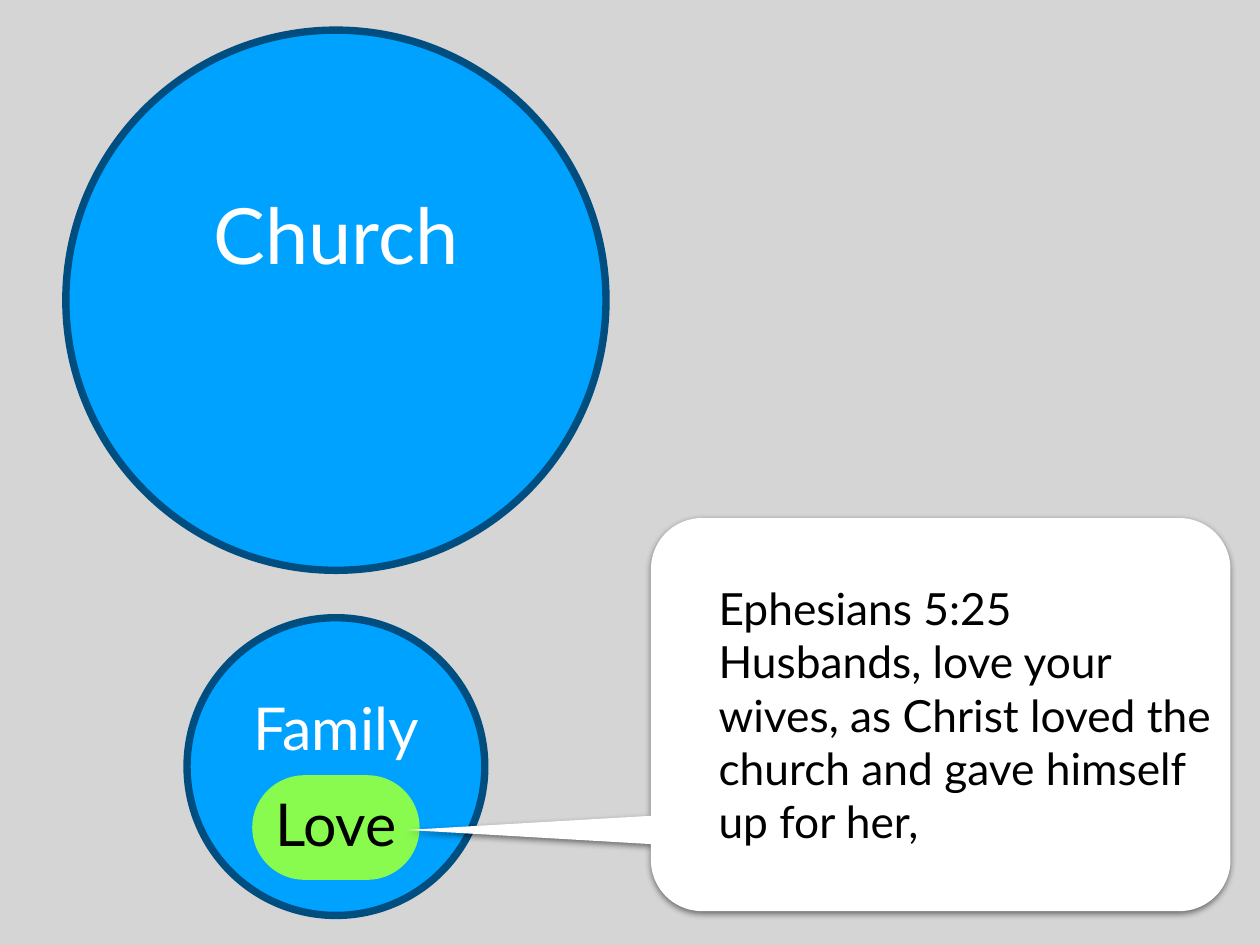
import math
from pptx import Presentation
from pptx import util as u
from pptx.dml.color import RGBColor
from pptx.enum import shapes, text
from pptx.oxml import parse_xml
from pptx.oxml.ns import nsdecls

COLOURS = {"backdrop": "D5D5D5", "circle": "00A2FF", "rim": "004D80",
           "pill": "89FA4E", "bubble": "FFFFFF", "light": "FFFFFF", "dark": "000000"}
SLIDE = (1024, 768)
AXIS = 273
CIRCLES = [(244, 439), (623, 242)]
PILL = (672.5, 136, 85)
LABELS = [("Church", 190, 220, 93, 63, "light"),
          ("Family", 591, 153, 73, 48, "light"),
          ("Love", 668.5, 114, 73, 48, "dark")]
VERSE = ["Ephesians 5:25",
         "Husbands, love your wives, as Christ loved the church and gave himself up for her,"]
VERSE_BOX = (580, 454, 416, 253)
BUBBLE = (529, 421, 1000, 740.5)
CORNER = 41.5
TIP = (331, 674.5)
TAIL_HALF = 11.5
ARC_STEPS = 18
FRAME = {"vertical_anchor": text.MSO_ANCHOR.MIDDLE,
         "auto_size": text.MSO_AUTO_SIZE.SHAPE_TO_FIT_TEXT,
         **{f"margin_{side}": u.Pt(4) for side in ("left", "top", "right", "bottom")}}


def rgb(name):
    return RGBColor.from_string(COLOURS[name])


def centred(middle, width, height):
    return AXIS - width / 2, middle - height / 2, width, height


def paint(shape, fill, rim=None):
    shape.shadow.inherit = False
    shape.fill.solid()
    shape.fill.fore_color.rgb = rgb(fill)
    if rim:
        shape.line.color.rgb = rgb(rim)
        shape.line.width = u.Pt(6)
    else:
        shape.line.fill.background()
    return shape


def add_preset(slide, kind, box, fill, rim=None):
    return paint(slide.shapes.add_shape(kind, *map(u.Pt, box)), fill, rim)


def add_words(slide, lines, box, size, colour, align, wrap):
    frame = slide.shapes.add_textbox(*map(u.Pt, box)).text_frame
    for key, value in {**FRAME, "word_wrap": wrap}.items():
        setattr(frame, key, value)
    frame.text = "\n".join(lines)
    for paragraph in frame.paragraphs:
        paragraph.alignment = align
        font = paragraph.runs[0].font
        for key, value in {"name": "Lato", "size": u.Pt(size)}.items():
            setattr(font, key, value)
        font.color.rgb = rgb(colour)


def bubble_outline():
    left, top, right, bottom = BUBBLE
    near, far = left + CORNER, right - CORNER
    high, low = top + CORNER, bottom - CORNER
    corners = [(near, high, 180), (far, high, 270), (far, low, 0), (near, low, 90)]
    points = []
    for x, y, start in corners:
        for step in range(ARC_STEPS + 1):
            angle = math.radians(start + 90 * step / ARC_STEPS)
            points.append((x + CORNER * math.cos(angle), y + CORNER * math.sin(angle)))
    tail = [(left, TIP[1] + TAIL_HALF), TIP, (left, TIP[1] - TAIL_HALF)]
    return [(u.Pt(x), u.Pt(y)) for x, y in points + tail]


def add_bubble(slide):
    start, *rest = bubble_outline()
    builder = slide.shapes.build_freeform(*start)
    builder.add_line_segments(rest, close=True)
    bubble = paint(builder.convert_to_shape(), "bubble")
    effects = bubble.fill._xPr.find("{*}effectLst")
    effects.append(parse_xml(
        f'<a:outerShdw {nsdecls("a")} blurRad="{u.Pt(5)}" dist="{u.Pt(2)}" dir="5400000" '
        f'rotWithShape="0"><a:srgbClr val="{COLOURS["dark"]}"><a:alpha val="50000"/>'
        '</a:srgbClr></a:outerShdw>'))


def main():
    deck = Presentation()
    deck.slide_width, deck.slide_height = map(u.Pt, SLIDE)
    slide = deck.slides.add_slide(deck.slide_layouts[6])
    preset = shapes.MSO_SHAPE
    add_preset(slide, preset.RECTANGLE, (0, -2, SLIDE[0], SLIDE[1] + 4), "backdrop")
    for middle, diameter in CIRCLES:
        add_preset(slide, preset.OVAL, centred(middle, diameter, diameter), "circle", "rim")
    pill = add_preset(slide, preset.ROUNDED_RECTANGLE, centred(*PILL), "pill")
    pill.adjustments[0] = 0.5
    for label, middle, width, height, size, colour in LABELS:
        add_words(slide, [label], centred(middle, width, height), size, colour,
                  text.PP_ALIGN.CENTER, False)
    add_bubble(slide)
    add_words(slide, VERSE, VERSE_BOX, 36, "dark", text.PP_ALIGN.LEFT, True)
    deck.save("out.pptx")


if __name__ == "__main__":
    main()
